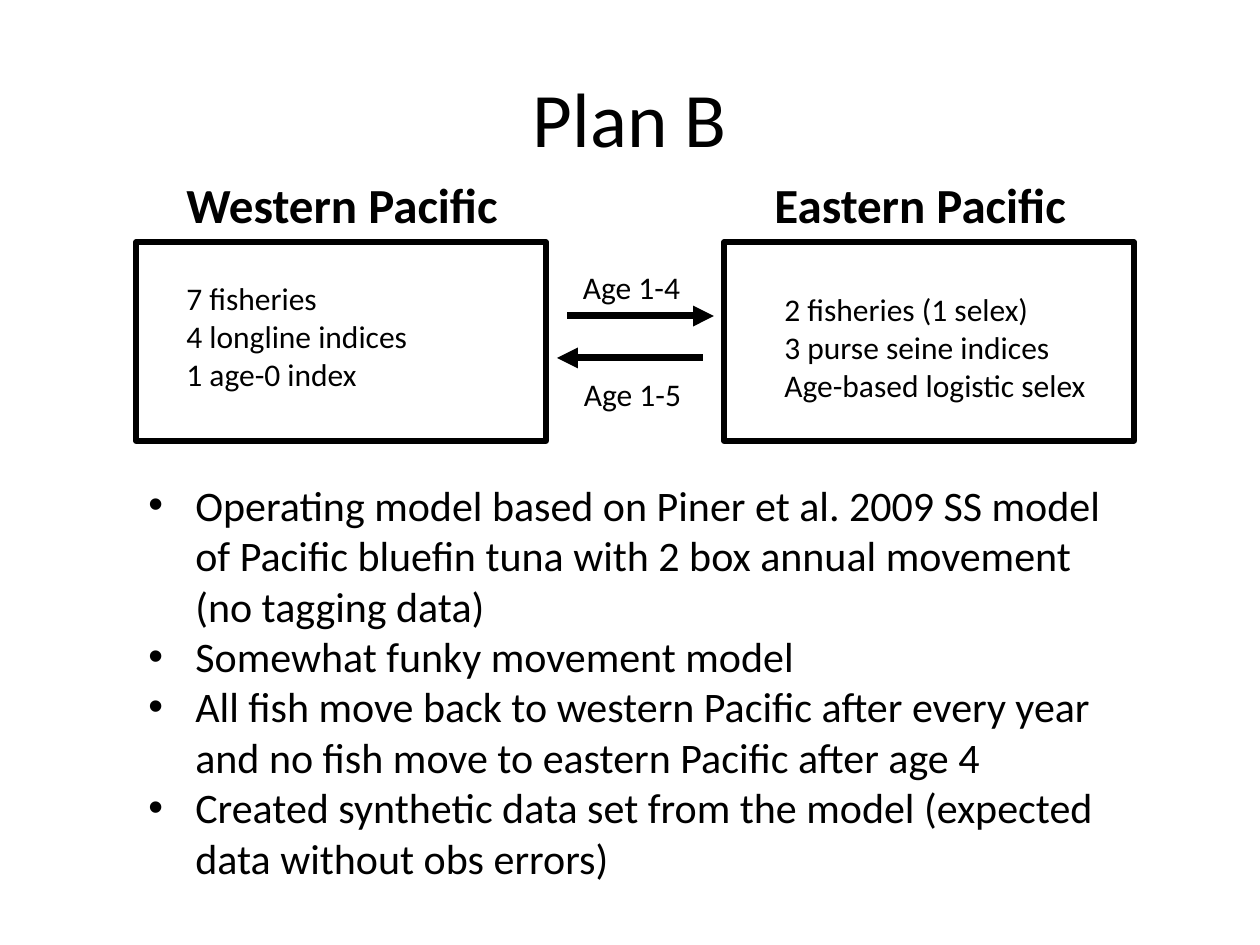
from dataclasses import dataclass

from lxml.etree import SubElement
from pptx import Presentation
from pptx.dml.color import RGBColor
from pptx.enum.shapes import MSO_CONNECTOR as Connector, MSO_SHAPE as Shape
from pptx.enum.text import MSO_ANCHOR as Anchor, MSO_AUTO_SIZE as AutoSize, PP_ALIGN as Align
from pptx.oxml.ns import qn
from pptx.util import Pt

EMU_PER_PX = 914400 / 126


@dataclass(frozen=True)
class Theme:
    font: str = "Calibri"
    ink: RGBColor = RGBColor(0, 0, 0)
    title: int = 44
    heading: int = 28
    body: int = 24
    label: int = 18
    outline: int = 3
    arrow: int = 4


THEME = Theme()

BOX_TOP, BOX_WIDTH, BOX_HEIGHT = 242, 410, 199
BULLET_INDENT = 47

# Heading, box left, heading width, list left, list top, list lines
REGIONS = [
    ("Western Pacific", 136, 341, 174, 273,
     ["7 fisheries", "4 longline indices", "1 age-0 index"]),
    ("Eastern Pacific", 724, 321, 772, 284,
     ["2 fisheries (1 selex)", "3 purse seine indices", "Age-based logistic selex"]),
]

# Label, label left, label top, arrow start, arrow end, arrow height on the slide
MOVEMENTS = [
    ("Age 1-4", 558, 262, 567, 714, 316),
    ("Age 1-5", 559, 369, 703, 557, 358),
]

FINDINGS = [
    "Operating model based on Piner et al. 2009 SS model of Pacific bluefin tuna "
    "with 2 box annual movement (no tagging data)",
    "Somewhat funky movement model",
    "All fish move back to western Pacific after every year and no fish move to "
    "eastern Pacific after age 4",
    "Created synthetic data set from the model (expected data without obs errors)",
]


def px(*lengths):
    return [round(length * EMU_PER_PX) for length in lengths]


def add_text(slide, bounds, lines, size, align=Align.LEFT, bold=False, wrap=True):
    frame = slide.shapes.add_textbox(*px(*bounds)).text_frame
    frame.word_wrap = wrap
    frame.auto_size = AutoSize.SHAPE_TO_FIT_TEXT
    frame.text = "\n".join(lines)
    for para in frame.paragraphs:
        para.alignment = align
        for span in para.runs:
            span.font.name = THEME.font
            span.font.size = Pt(size)
            span.font.bold = bold
            span.font.color.rgb = THEME.ink
    return frame


def add_title(slide, text):
    frame = add_text(slide, (63, 38, 1134, 158), [text], THEME.title, Align.CENTER)
    frame.auto_size = AutoSize.NONE
    frame.vertical_anchor = Anchor.MIDDLE


def add_bullets(slide, bounds, lines):
    frame = add_text(slide, bounds, lines, THEME.body)
    indent, = px(BULLET_INDENT)
    for para in frame.paragraphs:
        properties = para._p.get_or_add_pPr()
        properties.set("marL", str(indent))
        properties.set("indent", str(-indent))
        SubElement(properties, qn("a:buFont"), typeface="Arial")
        SubElement(properties, qn("a:buChar"), char="•")


def add_region(slide, heading, left, heading_width, list_left, list_top, lines):
    box = slide.shapes.add_shape(
        Shape.RECTANGLE, *px(left, BOX_TOP, BOX_WIDTH, BOX_HEIGHT))
    box.shadow.inherit = False
    box.fill.background()
    box.line.color.rgb = THEME.ink
    box.line.width = Pt(THEME.outline)
    add_text(slide, (left + 38, 168, heading_width, 72), [heading],
             THEME.heading, bold=True, wrap=False)
    add_text(slide, (list_left, list_top, 330, 127), lines, THEME.label)


def add_movement(slide, label, left, top, start, end, height):
    arrow = slide.shapes.add_connector(
        Connector.STRAIGHT, *px(start, height, end, height))
    arrow.line.color.rgb = THEME.ink
    arrow.line.width = Pt(THEME.arrow)
    SubElement(arrow.line._get_or_add_ln(), qn("a:tailEnd"), type="triangle")
    SubElement(arrow._element.spPr, qn("a:effectLst"))
    add_text(slide, (left, top, 147, 50), [label], THEME.label, Align.CENTER)


def main():
    deck = Presentation()
    deck.slide_width, deck.slide_height = px(1260, 945)
    slide = deck.slides.add_slide(deck.slide_layouts[6])
    add_title(slide, "Plan B")
    for region in REGIONS:
        add_region(slide, *region)
    for movement in MOVEMENTS:
        add_movement(slide, *movement)
    add_bullets(slide, (136, 473, 1008, 420), FINDINGS)
    deck.save("out.pptx")


if __name__ == "__main__":
    main()
